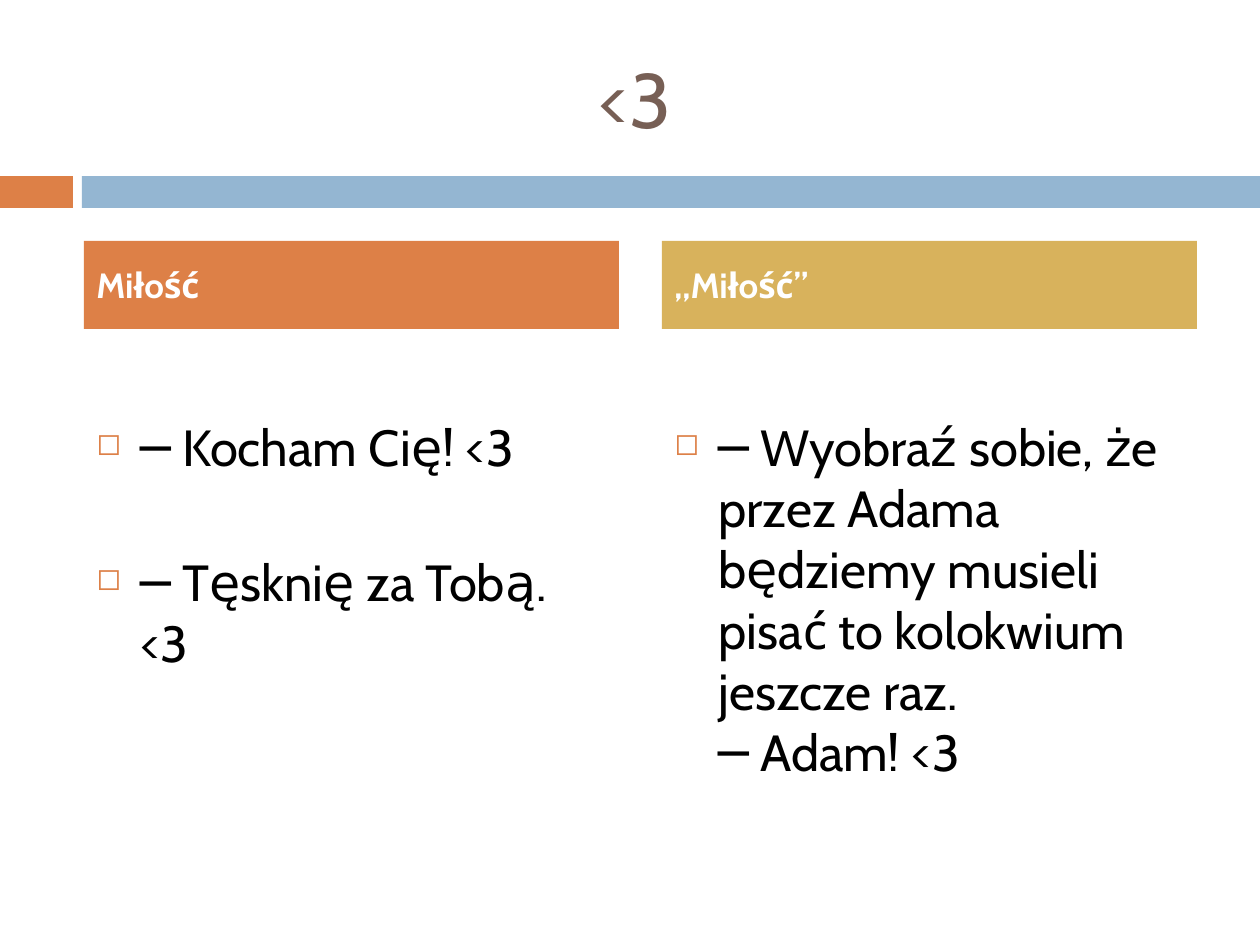
from lxml.etree import SubElement
from pptx import Presentation
from pptx.dml.color import RGBColor
from pptx.enum.shapes import MSO_SHAPE as Shape
from pptx.enum.text import MSO_ANCHOR as Anchor, PP_ALIGN as Align
from pptx.oxml.ns import qn
from pptx.util import Emu, Pt

PX_PER_INCH = 126
FONT = "Cabin"
ORANGE = RGBColor(0xDD, 0x80, 0x47)
BLUE = RGBColor(0x94, 0xB6, 0xD2)
GOLD = RGBColor(0xD8, 0xB2, 0x5C)
BROWN = RGBColor(0x77, 0x5F, 0x55)
BLACK = RGBColor(0, 0, 0)
WHITE = RGBColor(0xFF, 0xFF, 0xFF)

COLUMN_LEFT, COLUMN_STEP, COLUMN_WIDTH = 84, 578, 535
COLUMNS = [
    ("Miłość", ORANGE, ["─ Kocham Cię! <3", "─ Tęsknię za Tobą. <3"]),
    ("„Miłość”", GOLD, [
        "─ Wyobraź sobie, że przez Adama będziemy musieli pisać to kolokwium "
        "jeszcze raz.\v─ Adam! <3"]),
]


def px(count):
    return Emu(round(count * 914400 / PX_PER_INCH))


def format_runs(para, size, color, bold=False):
    for span in para.runs:
        span.font.name = FONT
        span.font.size = Pt(size)
        span.font.bold = bold
        span.font.color.rgb = color


def add_bar(page, left, top, width, height, color):
    bar = page.shapes.add_shape(
        Shape.RECTANGLE, px(left), px(top), px(width), px(height))
    bar.shadow.inherit = False
    bar.fill.solid()
    bar.fill.fore_color.rgb = color
    bar.line.fill.background()
    return bar


def set_title(page, text):
    title = page.shapes.title
    title.left, title.top, title.width, title.height = map(px, (73, 38, 1124, 120))
    title.text_frame.text = text
    title.text_frame.vertical_anchor = Anchor.MIDDLE
    para = title.text_frame.paragraphs[0]
    para.alignment = Align.CENTER
    format_runs(para, 44, BROWN)


def add_heading(page, left, text, color):
    heading = add_bar(page, left, 241, COLUMN_WIDTH, 88, color)
    heading.text_frame.text = text
    heading.text_frame.vertical_anchor = Anchor.MIDDLE
    para = heading.text_frame.paragraphs[0]
    para.alignment = Align.LEFT
    format_runs(para, 20, WHITE, bold=True)


def add_bullet(para):
    props = para._p.get_or_add_pPr()
    props.set("marL", str(px(44)))
    props.set("indent", str(-px(44)))
    color = SubElement(props, qn("a:buClr"))
    SubElement(color, qn("a:srgbClr")).set("val", str(ORANGE))
    SubElement(props, qn("a:buSzPct")).set("val", "60000")
    SubElement(props, qn("a:buChar")).set("char", "◻")


def add_quotes(page, left, quotes):
    box = page.shapes.add_textbox(px(left), px(336), px(COLUMN_WIDTH), px(494))
    frame = box.text_frame
    frame.word_wrap = True
    frame.margin_top = px(80)
    for index, quote in enumerate(quotes):
        para = frame.add_paragraph() if index else frame.paragraphs[0]
        para.text = quote
        para.space_before = Pt(42 if index else 0)
        add_bullet(para)
        format_runs(para, 29, BLACK)


def main():
    deck = Presentation()
    deck.slide_width, deck.slide_height = px(1260), px(945)
    page = deck.slides.add_slide(deck.slide_layouts.get_by_name("Title Only"))

    # Title and the band below it
    set_title(page, "<3")
    add_bar(page, 0, 176, 73, 32, ORANGE)
    add_bar(page, 82, 176, 1178, 32, BLUE)

    # Two columns, each a heading over its quotes
    for index, (heading, color, quotes) in enumerate(COLUMNS):
        left = COLUMN_LEFT + index * COLUMN_STEP
        add_quotes(page, left, quotes)
        add_heading(page, left, heading, color)

    deck.save("out.pptx")


if __name__ == "__main__":
    main()
